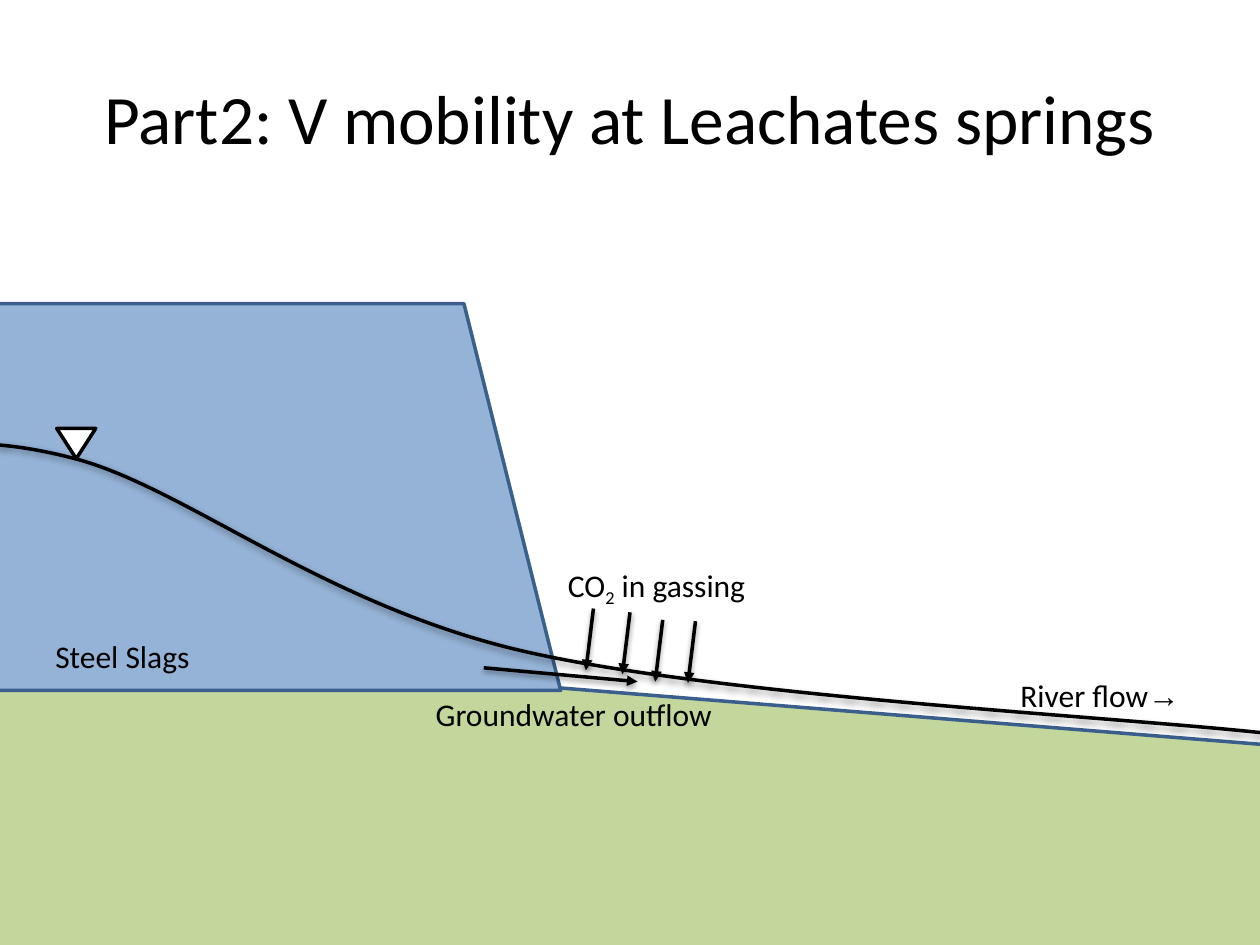
from dataclasses import dataclass

from lxml import etree
from pptx import Presentation
from pptx.dml.color import RGBColor
from pptx.enum import shapes, text
from pptx.oxml.ns import qn
from pptx.util import Inches, Pt

COLORS = {
    "ink": "000000",
    "ground": "C3D69B",
    "slag": "95B3D7",
    "outline": "3A5F8C",
    "white": "FFFFFF",
}
FONT = "Calibri"
LINE_WIDTH = Pt(2)


@dataclass
class Block:
    preset: shapes.MSO_SHAPE
    box: tuple[float, float, float, float]
    fill: str
    line: str
    rotation: float = 0


@dataclass
class Piece:
    text: str
    font: str = FONT
    bold: bool | None = None
    subscript: bool = False


@dataclass
class Label:
    box: tuple[float, float, float, float]
    pieces: list[Piece]


@dataclass
class Arrow:
    start: tuple[float, float]
    end: tuple[float, float]


BLOCKS = [
    Block(shapes.MSO_SHAPE.RECTANGLE, (-1.33, 5.48, 11.94, 2.46), "ground", "outline", 4.6),
    Block(shapes.MSO_SHAPE.TRAPEZOID, (-1.22, 2.41, 5.67, 3.07), "slag", "outline"),
]
WATER_MARKER = Block(
    shapes.MSO_SHAPE.ISOSCELES_TRIANGLE, (0.45, 3.4, 0.31, 0.24), "white", "ink", 180
)
# Start point, then three Bézier points for each curve section
WATER_TABLE = [
    (-1.14, 3.7),
    (-0.7, 3.56), (-0.26, 3.41), (0.63, 3.65),
    (1.51, 3.9), (2.59, 4.81), (4.16, 5.17),
    (5.73, 5.53), (8.88, 5.69), (10.05, 5.82),
    (11.22, 5.94), (11.18, 5.93), (11.15, 5.92),
]
OUTFLOW_ARROW = Arrow((3.84, 5.3), (5.06, 5.41))
GAS_ARROWS = [
    Arrow((x, y), (x - 0.06, y + 0.49))
    for x, y in [(4.71, 4.83), (5, 4.86), (5.26, 4.92), (5.52, 4.93)]
]
LABELS = [
    Label((3.36, 5.47, 2.43, 0.4), [Piece("Groundwater outflow")]),
    Label((0.34, 5.01, 1.28, 0.4), [Piece("Steel Slags")]),
    Label((4.41, 4.44, 1.64, 0.4),
          [Piece("CO"), Piece("2", subscript=True), Piece(" in gassing")]),
    Label((8, 5.32, 1.48, 0.4),
          [Piece("River flow"), Piece("→", "Times New Roman", True)]),
]


def color(name: str) -> RGBColor:
    return RGBColor.from_string(COLORS[name])


def style_line(shape, name: str) -> None:
    shape.line.color.rgb = color(name)
    shape.line.width = LINE_WIDTH


def add_soft_shadow(shape) -> None:
    """Append a shadow; the line must be styled before this."""
    effects = etree.SubElement(shape._element.spPr, qn("a:effectLst"))
    shadow = etree.SubElement(
        effects, qn("a:outerShdw"), blurRad=str(Pt(3.1)), dist=str(Pt(1.6)),
        dir=str(90 * 60000), rotWithShape="0",
    )
    shade = etree.SubElement(shadow, qn("a:srgbClr"), val=COLORS["ink"])
    etree.SubElement(shade, qn("a:alpha"), val="38000")


def add_block(slide, block: Block) -> None:
    shape = slide.shapes.add_shape(block.preset, *map(Inches, block.box))
    shape.shadow.inherit = False
    shape.rotation = block.rotation
    shape.fill.solid()
    shape.fill.fore_color.rgb = color(block.fill)
    style_line(shape, block.line)


def add_curve(slide, points: list[tuple[float, float]]) -> None:
    """Draw an open outline and join each three segments into a Bézier curve."""
    start, *others = [(Inches(x), Inches(y)) for x, y in points]
    builder = slide.shapes.build_freeform(*start)
    builder.add_line_segments(others, close=False)
    curve = builder.convert_to_shape()
    curve.fill.background()
    style_line(curve, "ink")
    add_soft_shadow(curve)
    segments = list(curve._element.iter(qn("a:lnTo")))
    for first in range(0, len(segments), 3):
        group = segments[first:first + 3]
        bezier = etree.Element(qn("a:cubicBezTo"))
        group[0].addprevious(bezier)
        for segment in group:
            bezier.append(segment[0])
            segment.getparent().remove(segment)


def add_arrow(slide, arrow: Arrow) -> None:
    connector = slide.shapes.add_connector(
        shapes.MSO_CONNECTOR.STRAIGHT, *map(Inches, arrow.start + arrow.end)
    )
    style_line(connector, "ink")
    line = connector._element.spPr.find(qn("a:ln"))
    etree.SubElement(line, qn("a:tailEnd"), type="triangle")
    add_soft_shadow(connector)


def add_label(slide, label: Label) -> None:
    frame = slide.shapes.add_textbox(*map(Inches, label.box)).text_frame
    frame.word_wrap = False
    frame.auto_size = text.MSO_AUTO_SIZE.SHAPE_TO_FIT_TEXT
    for piece in label.pieces:
        run = frame.paragraphs[0].add_run()
        run.text = piece.text
        run.font.name = piece.font
        run.font.size = Pt(18)
        run.font.bold = piece.bold
        run.font.color.rgb = color("ink")
        if piece.subscript:
            run.font._element.set("baseline", "-25000")


def set_title(slide, wording: str) -> None:
    title = slide.shapes.title
    title.left, title.top, title.width, title.height = map(Inches, (0.5, 0.3, 9, 1.25))
    frame = title.text_frame
    frame.text = wording
    frame.vertical_anchor = text.MSO_ANCHOR.MIDDLE
    paragraph = frame.paragraphs[0]
    paragraph.alignment = text.PP_ALIGN.CENTER
    font = paragraph.runs[0].font
    font.name, font.size = FONT, Pt(39.6)
    font.color.rgb = color("ink")


def main() -> None:
    presentation = Presentation()
    presentation.slide_width, presentation.slide_height = Inches(10), Inches(7.5)
    slide = presentation.slides.add_slide(presentation.slide_layouts.get_by_name("Title Only"))
    set_title(slide, "Part2: V mobility at Leachates springs")
    for block in BLOCKS:
        add_block(slide, block)
    add_curve(slide, WATER_TABLE)
    add_block(slide, WATER_MARKER)
    for arrow in [OUTFLOW_ARROW, *GAS_ARROWS]:
        add_arrow(slide, arrow)
    for label in LABELS:
        add_label(slide, label)
    presentation.save("out.pptx")


if __name__ == "__main__":
    main()
